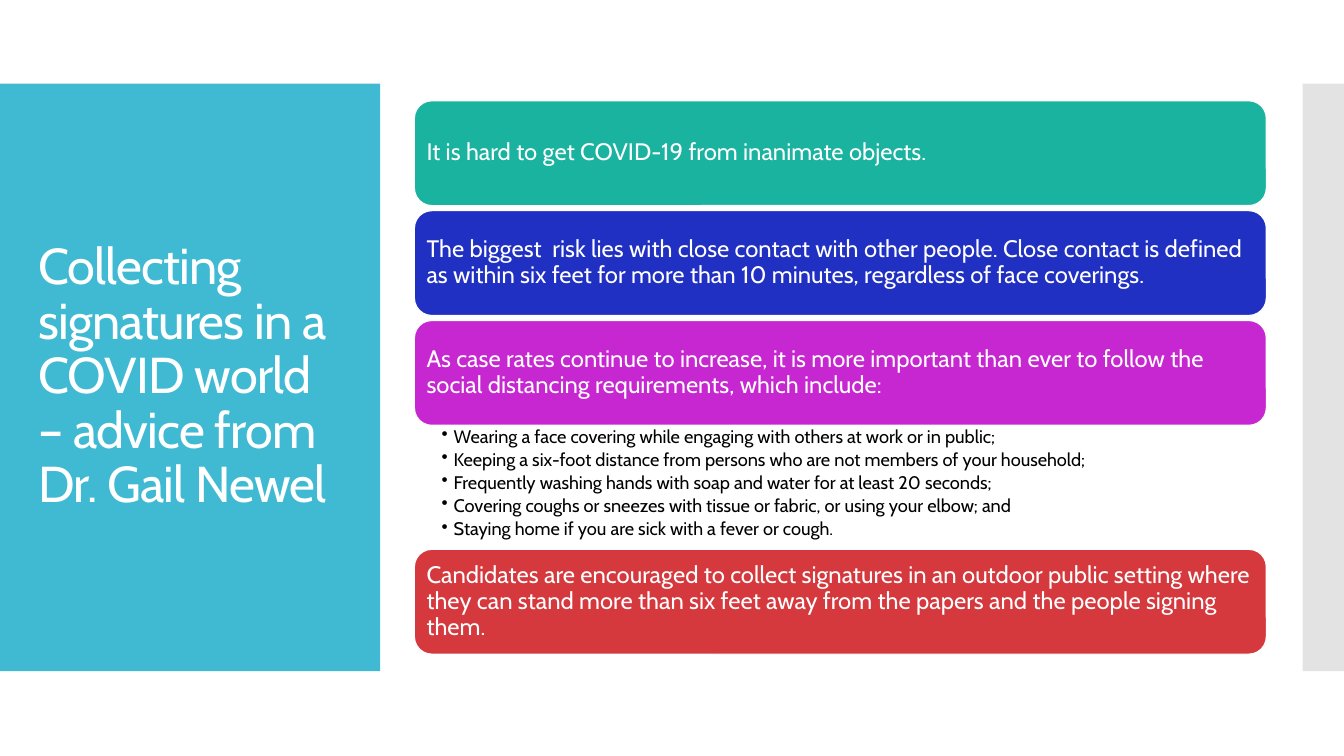
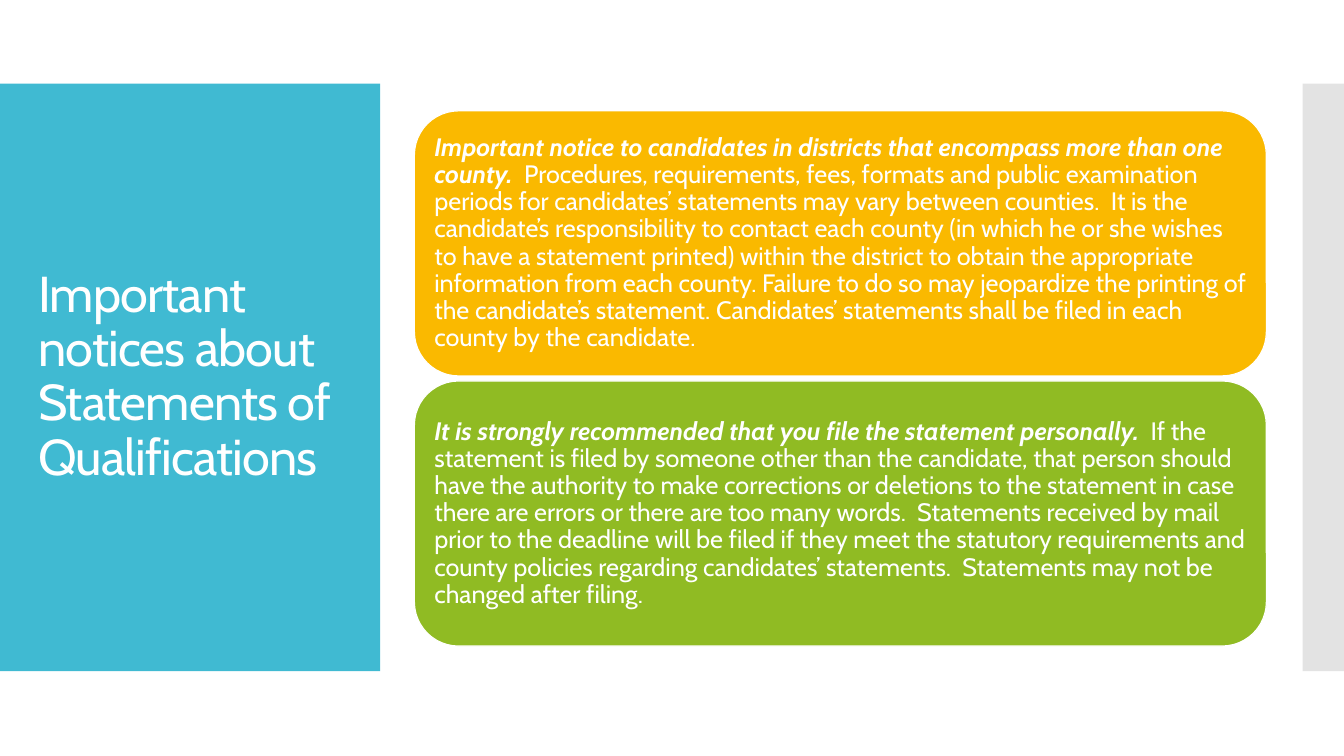
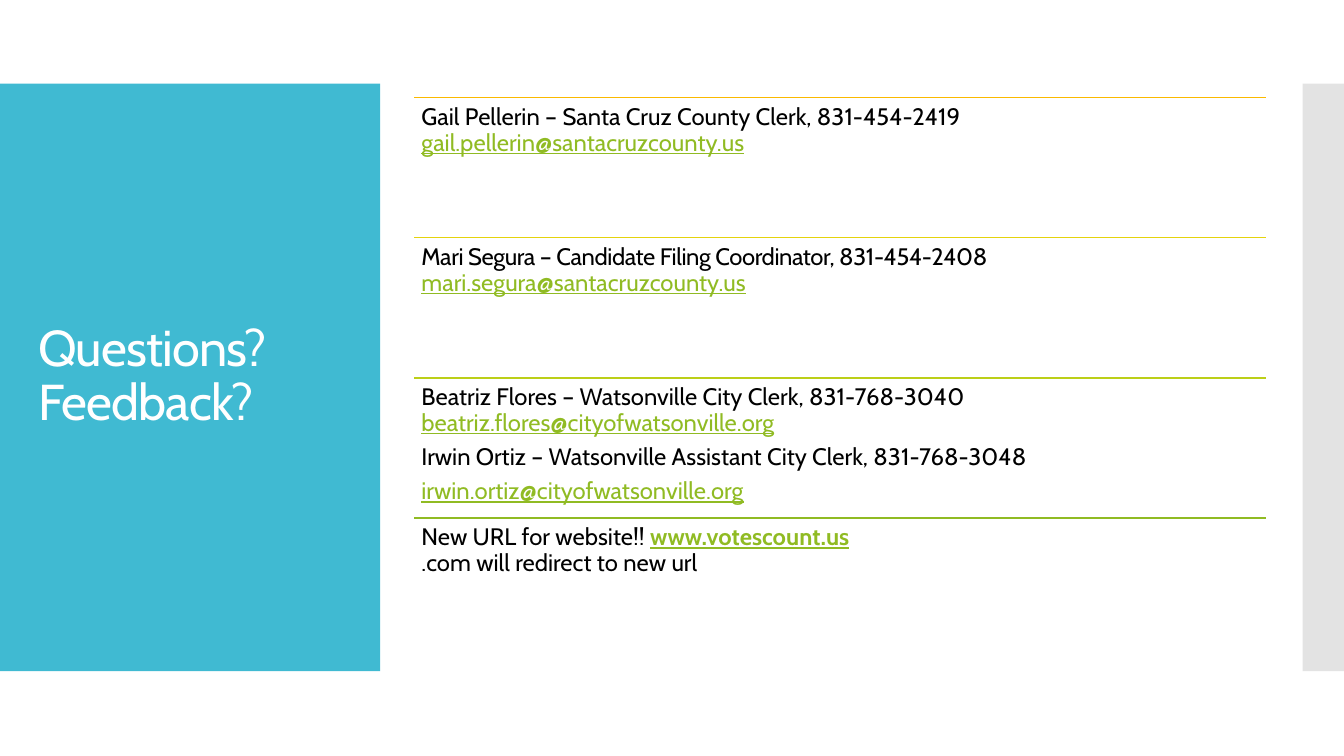
import copy
from dataclasses import dataclass, field

import lxml.etree
import pptx
import pptx.dml.color
import pptx.enum.shapes
import pptx.enum.text
import pptx.oxml.ns
import pptx.shapes.autoshape
import pptx.slide
import pptx.text.text
import pptx.util

Inches = pptx.util.Inches
Pt = pptx.util.Pt
RGBColor = pptx.dml.color.RGBColor
MSO_SHAPE = pptx.enum.shapes.MSO_SHAPE
MSO_ANCHOR = pptx.enum.text.MSO_ANCHOR
qn = pptx.oxml.ns.qn

# Colours and measures
WHITE = RGBColor(0xFF, 0xFF, 0xFF)
BLACK = RGBColor(0x00, 0x00, 0x00)
SKY = RGBColor(0x40, 0xBA, 0xD2)
GREY = RGBColor(0xC8, 0xC8, 0xC8)
TEAL = RGBColor(0x1A, 0xB3, 0x9F)
BLUE = RGBColor(0x20, 0x30, 0xC2)
MAGENTA = RGBColor(0xC7, 0x27, 0xD1)
RED = RGBColor(0xD5, 0x39, 0x3D)
AMBER = RGBColor(0xFA, 0xB9, 0x00)
YELLOW = RGBColor(0xE4, 0xD3, 0x0D)
LIME = RGBColor(0xBC, 0xCF, 0x18)
GREEN = RGBColor(0x90, 0xBB, 0x23)

FONT = "Cabin"
LINE_WIDTH = Pt(0.85)
BODY_LEFT, BODY_WIDTH = 4.11, 8.45
BAND_TOP, BAND_HEIGHT = 0.83, 5.83
CARD_GAP = 0.05
INSETS = (0.07, 0.07, 0.07, 0.07)
EMPHASIS = {"bold": True, "italic": True}
LINK = {"underline": True}


@dataclass
class Run:
    text: str
    fmt: dict = field(default_factory=dict)
    color: RGBColor | None = None
    spacing: float = 0


@dataclass
class Style:
    size: float
    color: RGBColor
    space_after: float = 0
    bullet_indent: float = 0


@dataclass
class Card:
    color: RGBColor
    runs: list[Run]


@dataclass
class Contact:
    rule: RGBColor
    paragraphs: list[list[Run]]


TITLE = Style(36, WHITE)
CARD = Style(17, WHITE, 6)
NOTICE = Style(18, WHITE, 6)
BULLET = Style(13, BLACK, 2.5, 0.12)
CONTACT = Style(17, BLACK, 6)


def link(text: str, **fmt: bool) -> Run:
    return Run(text, LINK | fmt, GREEN)


# Text
def add_run(p: pptx.text.text._Paragraph, run: Run, style: Style) -> None:
    for i, line in enumerate(run.text.split("\n")):
        if i:
            p.add_line_break()
            p._p[-1].append(copy.deepcopy(r._r.rPr))
        if not line:
            continue
        r = p.add_run()
        r.text = line
        for name, value in ({"name": FONT, "size": Pt(style.size)} | run.fmt).items():
            setattr(r.font, name, value)
        r.font.color.rgb = run.color or style.color
        if run.spacing:
            r._r.rPr.set("spc", str(round(run.spacing * 100)))


def write(tf: pptx.text.text.TextFrame, paragraphs: list[list[Run]], style: Style,
          insets: tuple = INSETS, anchor: MSO_ANCHOR = MSO_ANCHOR.TOP) -> None:
    sides = ("margin_left", "margin_top", "margin_right", "margin_bottom")
    frame = dict(zip(sides, map(Inches, insets)))
    for name, value in (frame | {"word_wrap": True, "vertical_anchor": anchor}).items():
        setattr(tf, name, value)
    for i, runs in enumerate(paragraphs):
        p = tf.add_paragraph() if i else tf.paragraphs[0]
        layout = {"alignment": pptx.enum.text.PP_ALIGN.LEFT, "line_spacing": 0.9,
                  "space_after": Pt(style.space_after)}
        for name, value in layout.items():
            setattr(p, name, value)
        if style.bullet_indent:
            pPr = p._p.get_or_add_pPr()
            indent = Inches(style.bullet_indent)
            pPr.set("marL", str(indent))
            pPr.set("indent", str(-indent))
            lxml.etree.SubElement(pPr, qn("a:buChar")).set("char", "•")
        for run in runs:
            add_run(p, run, style)


def add_text(s: pptx.slide.Slide, x: float, y: float, w: float, h: float,
             paragraphs: list[list[Run]], style: Style, insets: tuple = INSETS,
             anchor: MSO_ANCHOR = MSO_ANCHOR.TOP) -> None:
    box = s.shapes.add_textbox(*map(Inches, (x, y, w, h)))
    write(box.text_frame, paragraphs, style, insets, anchor)


# Shapes
def add_block(s: pptx.slide.Slide, kind: MSO_SHAPE, x: float, y: float, w: float,
              h: float, color: RGBColor) -> pptx.shapes.autoshape.Shape:
    sp = s.shapes.add_shape(kind, *map(Inches, (x, y, w, h)))
    sp.shadow.inherit = False
    sp.fill.solid()
    sp.fill.fore_color.rgb = color
    sp.line.fill.background()
    return sp


def add_card(s: pptx.slide.Slide, y: float, h: float, card: Card, style: Style) -> None:
    sp = add_block(s, MSO_SHAPE.ROUNDED_RECTANGLE, BODY_LEFT, y, BODY_WIDTH, h, card.color)
    sp.line.color.rgb = WHITE
    sp.line.width = LINE_WIDTH
    write(sp.text_frame, [card.runs], style, anchor=MSO_ANCHOR.MIDDLE)


def add_rule(s: pptx.slide.Slide, y: float, color: RGBColor) -> None:
    ends = map(Inches, (BODY_LEFT, y, BODY_LEFT + BODY_WIDTH, y))
    rule = s.shapes.add_connector(pptx.enum.shapes.MSO_CONNECTOR.STRAIGHT, *ends)
    rule.line.color.rgb = color
    rule.line.width = LINE_WIDTH
    lxml.etree.SubElement(rule._element.spPr, qn("a:effectLst"))


def new_slide(prs: pptx.presentation.Presentation, title: str) -> pptx.slide.Slide:
    """Add a blank slide with the title band and the side band."""
    s = prs.slides.add_slide(prs.slide_layouts[6])
    add_block(s, MSO_SHAPE.RECTANGLE, 0, BAND_TOP, 3.77, BAND_HEIGHT, SKY)
    side = add_block(s, MSO_SHAPE.RECTANGLE, 12.92, BAND_TOP, 0.41, BAND_HEIGHT, GREY)
    tint = side._element.spPr.find(".//" + qn("a:srgbClr"))
    lxml.etree.SubElement(tint, qn("a:alpha")).set("val", "50000")
    add_text(s, 0.28, 1.23, 3.22, 5.03, [[Run(title, spacing=-0.6)]], TITLE,
             (0.1, 0.05, 0.1, 0.05), MSO_ANCHOR.MIDDLE)
    return s


# Content
ADVICE = [
    Card(TEAL, [Run("It is hard to get COVID-19 from inanimate objects.")]),
    Card(BLUE, [Run("The biggest  risk lies with close contact with other people. Close "
                    "contact is defined as within six feet for more than 10 minutes, "
                    "regardless of face coverings.")]),
    Card(MAGENTA, [Run("As case rates continue to increase, it is more important than ever "
                       "to follow the social distancing requirements, which include:")]),
    Card(RED, [Run("Candidates are encouraged to collect signatures in an outdoor public "
                   "setting where they can stand more than six feet away from the papers "
                   "and the people signing them.")]),
]
REQUIREMENTS = [
    "Wearing a face covering while engaging with others at work or in public;",
    "Keeping a six-foot distance from persons who are not members of your household;",
    "Frequently washing hands with soap and water for at least 20 seconds;",
    "Covering coughs or sneezes with tissue or fabric, or using your elbow; and",
    "Staying home if you are sick with a fever or cough.",
]
NOTICES = [
    Card(AMBER, [
        Run("Important notice to candidates in districts that encompass more than one "
            "county.  ", EMPHASIS),
        Run("Procedures, requirements, fees, formats and public examination periods for "
            "candidates’ statements may vary between counties.  It is the candidate’s "
            "responsibility to contact each county (in which he or she wishes to have a "
            "statement printed) within the district to obtain the appropriate information "
            "from each county. Failure to do so may jeopardize the printing of the "
            "candidate’s statement. Candidates’ statements shall be filed in each county "
            "by the candidate.")]),
    Card(GREEN, [
        Run("It is strongly recommended that you file the statement personally.  ", EMPHASIS),
        Run("If the statement is filed by someone other than the candidate, that person "
            "should have the authority to make corrections or deletions to the statement "
            "in case there are errors or there are too many words.  Statements received by "
            "mail prior to the deadline will be filed if they meet the statutory "
            "requirements and county policies regarding candidates’ statements.  "
            "Statements may not be changed after filing.")]),
]
CONTACTS = [
    Contact(AMBER, [[Run("Gail Pellerin – Santa Cruz County Clerk, 831-454-2419\n"),
                     link("gail.pellerin@santacruzcounty.us")]]),
    Contact(YELLOW, [[Run("Mari Segura – Candidate Filing Coordinator, 831-454-2408\n",
                          spacing=-0.3),
                      link("mari.segura@santacruzcounty.us")]]),
    Contact(LIME, [[Run("Beatriz Flores – Watsonville City Clerk, 831-768-3040\n"),
                    link("beatriz.flores@cityofwatsonville.org")],
                   [Run("Irwin Ortiz – Watsonville Assistant City Clerk, 831-768-3048")],
                   [link("irwin.ortiz@cityofwatsonville.org")]]),
    Contact(GREEN, [[Run("New URL for website!! "), link("www.votescount.us", bold=True),
                     Run(" \n.com will redirect to new url")]]),
]


# Slides
def advice_slide(prs: pptx.presentation.Presentation) -> None:
    s = new_slide(prs, "Collecting signatures in a COVID world – advice from \nDr. Gail Newel")
    y, card_height, list_height = 1.0, 1.04, 1.23
    for card in ADVICE:
        add_card(s, y, card_height, card, CARD)
        y += card_height
        if card.color == MAGENTA:
            add_text(s, BODY_LEFT, y, BODY_WIDTH, list_height,
                     [[Run(item)] for item in REQUIREMENTS], BULLET,
                     (0.27, 0.02, 0.13, 0.02))
            y += list_height
        else:
            y += CARD_GAP


def notices_slide(prs: pptx.presentation.Presentation) -> None:
    s = new_slide(prs, "Important notices about Statements of Qualifications")
    card_height = 2.63
    for i, card in enumerate(NOTICES):
        add_card(s, 1.1 + i * (card_height + CARD_GAP), card_height, card, NOTICE)


def contacts_slide(prs: pptx.presentation.Presentation) -> None:
    s = new_slide(prs, "Questions?\nFeedback?")
    row_height = 1.39
    for i, contact in enumerate(CONTACTS):
        y = 0.97 + i * row_height
        add_rule(s, y, contact.rule)
        add_text(s, BODY_LEFT, y, BODY_WIDTH, row_height, contact.paragraphs, CONTACT)


def main() -> None:
    prs = pptx.Presentation()
    prs.slide_width, prs.slide_height = Inches(13.33), Inches(7.5)
    advice_slide(prs)
    notices_slide(prs)
    contacts_slide(prs)
    prs.save("out.pptx")


if __name__ == "__main__":
    main()
